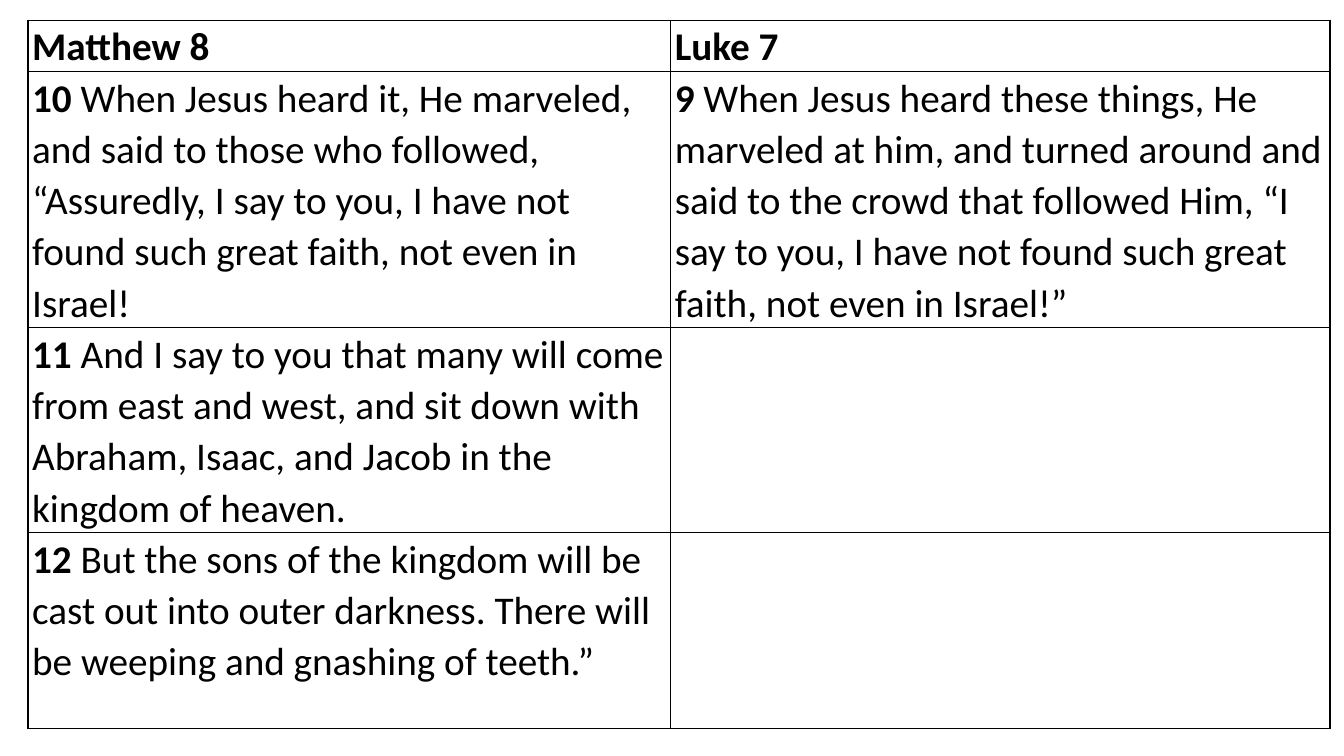
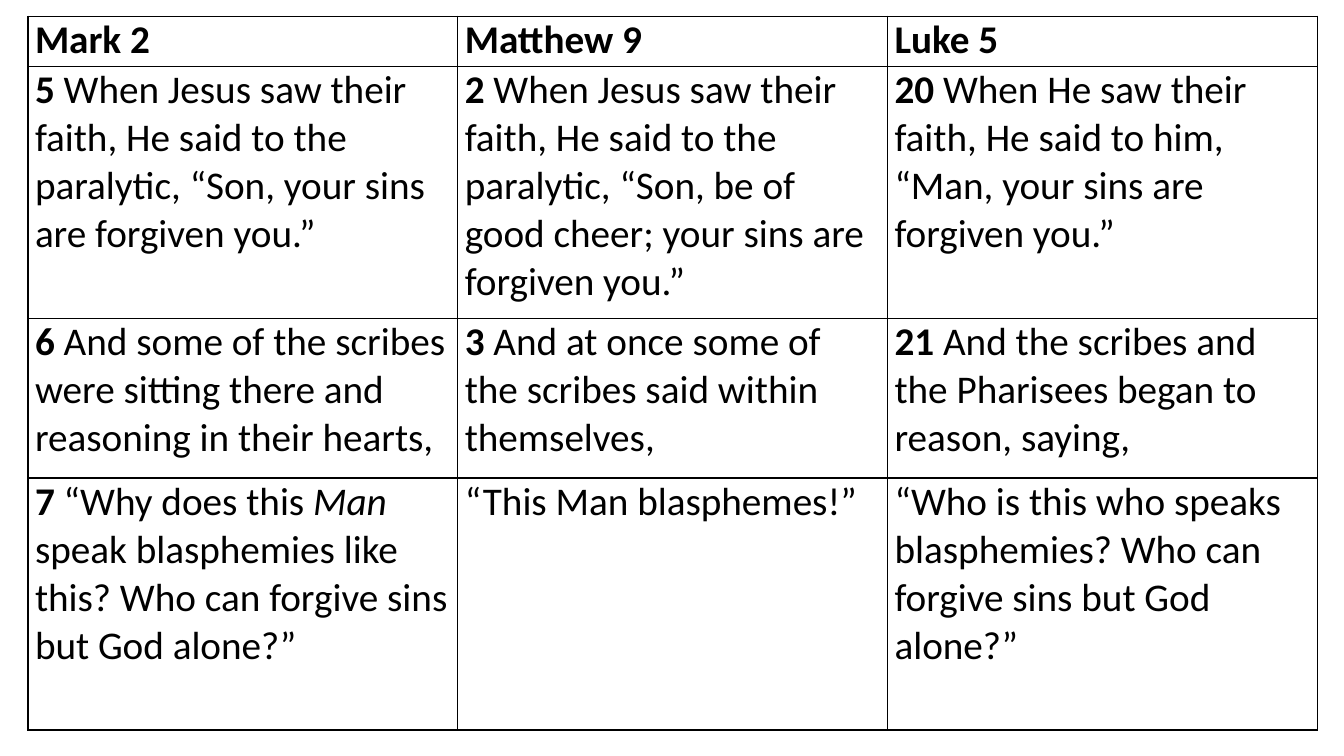
from lxml.etree import SubElement
from pptx import Presentation
from pptx.dml.color import RGBColor
from pptx.oxml.ns import qn
from pptx.util import Pt

FONT, TEXT_SIZE = "Calibri", 28
INK, PAPER = "000000", "FFFFFF"
BORDER_WIDTH = 1
BLANK_LAYOUT = 6

# Each verse is a pair: its number and its words, with _italics_ marked.
CENTURION = {
    "headings": ["Matthew 8", "Luke 7"],
    "verses": [
        [("10", " When Jesus heard it, He marveled, and said to those who followed, “Assuredly, "
                "I say to you, I have not found such great faith, not even in Israel!"),
         ("9", " When Jesus heard these things, He marveled at him, and turned around and said "
               "to the crowd that followed Him, “I say to you, I have not found such great "
               "faith, not even in Israel!”")],
        [("11", " And I say to you that many will come from east and west, and sit down with "
                "Abraham, Isaac, and Jacob in the kingdom of heaven."),
         ("", "")],
        [("12", " But the sons of the kingdom will be cast out into outer darkness. There will "
                "be weeping and gnashing of teeth.”"),
         ("", "")],
    ],
}
PARALYTIC = {
    "headings": ["Mark 2", "Matthew 9", "Luke 5"],
    "verses": [
        [("5", " When Jesus saw their faith, He said to the paralytic, “Son, your sins are "
               "forgiven you.”"),
         ("2", " When Jesus saw their faith, He said to the paralytic, “Son, be of good cheer; "
               "your sins are forgiven you.”"),
         ("20", " When He saw their faith, He said to him, “Man, your sins are forgiven you.”")],
        [("6", " And some of the scribes were sitting there and reasoning in their hearts,"),
         ("3", " And at once some of the scribes said within themselves,"),
         ("21", " And the scribes and the Pharisees began to reason, saying,")],
        [("7", " “Why does this _Man_ speak blasphemies like this? Who can forgive sins but "
               "God alone?”"),
         ("", "“This Man blasphemes!”"),
         ("", "“Who is this who speaks blasphemies? Who can forgive sins but God alone?”")],
    ],
}


def color(hex_string):
    return RGBColor.from_string(hex_string)


def add_run(paragraph, text, bold=False, italic=False):
    if not text:
        return
    run = paragraph.add_run()
    run.text = text
    font = run.font
    font.name, font.size = FONT, Pt(TEXT_SIZE)
    font.bold, font.italic = bold, italic
    font.color.rgb = color(INK)


def add_borders(cell):
    properties = cell._tc.get_or_add_tcPr()
    for position, side in enumerate(("a:lnL", "a:lnR", "a:lnT", "a:lnB")):
        line = SubElement(properties, qn(side), w=str(Pt(BORDER_WIDTH)))
        fill = SubElement(line, qn("a:solidFill"))
        SubElement(fill, qn("a:srgbClr"), val=INK)
        properties.insert(position, line)


def fill_cell(cell, verse, inset, line_spacing):
    number, words = verse
    cell.margin_left = cell.margin_right = Pt(inset)
    cell.margin_top = cell.margin_bottom = 0
    cell.fill.solid()
    cell.fill.fore_color.rgb = color(PAPER)
    add_borders(cell)
    paragraph = cell.text_frame.paragraphs[0]
    paragraph.line_spacing = line_spacing
    add_run(paragraph, number, bold=True)
    for index, part in enumerate(words.split("_")):
        add_run(paragraph, part, italic=index % 2 == 1)


def add_parallel_slide(presentation, passage, left, top, widths, heights, inset, line_spacing):
    """Add a slide that sets the same story from several gospels side by side."""
    slide = presentation.slides.add_slide(presentation.slide_layouts[BLANK_LAYOUT])
    rows = [[(heading, "") for heading in passage["headings"]]] + passage["verses"]
    table = slide.shapes.add_table(len(heights), len(widths), Pt(left), Pt(top),
                                   Pt(sum(widths)), Pt(sum(heights))).table
    table.first_row = table.horz_banding = False
    for column, width in zip(table.columns, widths):
        column.width = Pt(width)
    for row, height, verses in zip(table.rows, heights, rows):
        row.height = Pt(height)
        for cell, verse in zip(row.cells, verses):
            fill_cell(cell, verse, inset, line_spacing)


def main():
    presentation = Presentation()
    presentation.slide_width, presentation.slide_height = Pt(960), Pt(540)
    add_parallel_slide(presentation, CENTURION, 20, 14.5, [459, 471],
                       [34, 175, 140, 140], inset=3, line_spacing=1.07)
    add_parallel_slide(presentation, PARALYTIC, 20, 11.5, [307] * 3,
                       [36, 180, 114, 180], inset=5, line_spacing=1.0)
    presentation.save("out.pptx")


if __name__ == "__main__":
    main()
